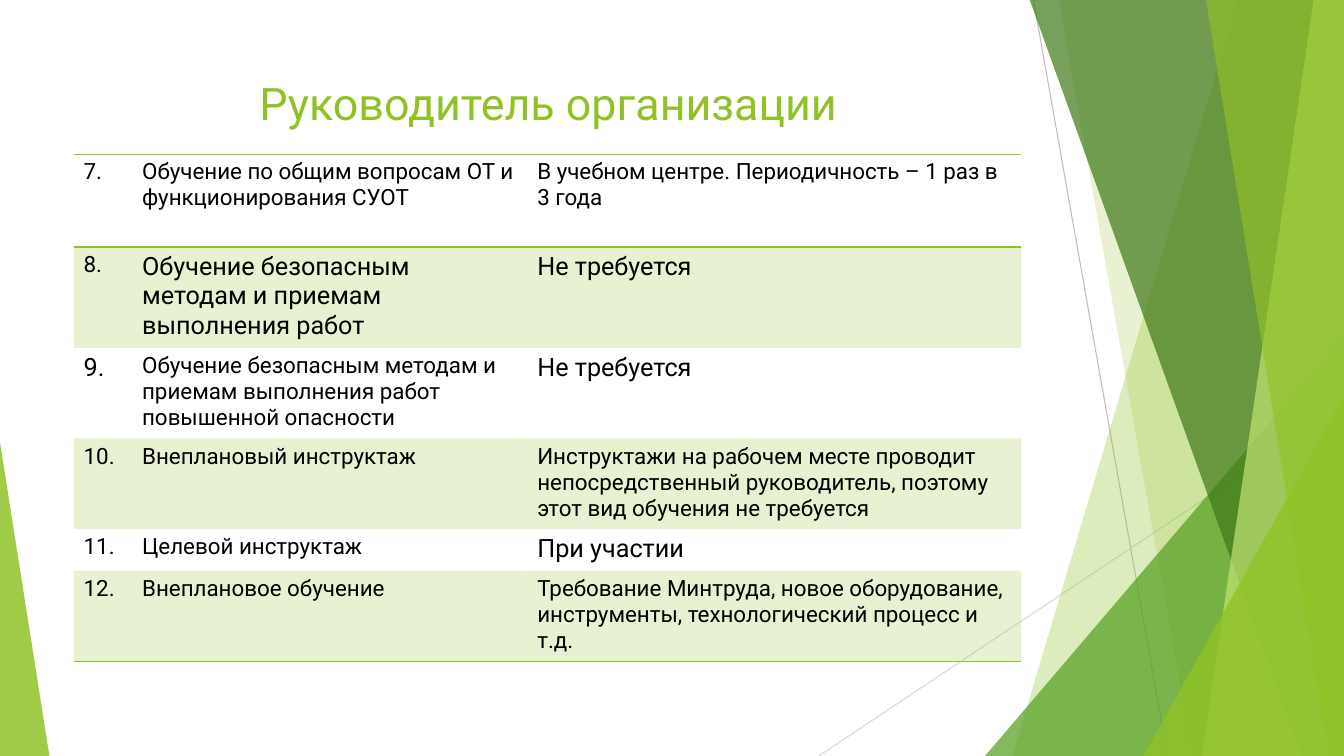
from dataclasses import dataclass

from lxml.etree import SubElement
from pptx import Presentation
from pptx.dml.color import RGBColor
from pptx.enum.shapes import MSO_CONNECTOR as Connector, MSO_SHAPE as Shape
from pptx.enum.text import MSO_ANCHOR as Anchor, PP_ALIGN as Align
from pptx.oxml import parse_xml
from pptx.oxml.ns import nsdecls, qn
from pptx.util import Inches, Pt


@dataclass(frozen=True)
class Theme:
    font: str = "Roboto"
    green: str = "90C226"
    leaf: str = "54A021"
    forest: str = "3F7819"
    lime: str = "C0E474"
    text: str = "000000"
    grey: str = "BFBFBF"
    light_grey: str = "D9D9D9"
    title_size: int = 32
    body_size: int = 16
    large_size: int = 18
    line_width: float = 0.75
    rule_width: int = 1
    band_opacity: int = 20


THEME = Theme()
WIDTH, HEIGHT = 13.33, 7.5
NO_GRID_STYLE = "{2D5ABB26-0587-4C30-8999-92F81FD0307C}"

ROW_HEIGHTS = [0.92, 0.98, 0.87, 0.87, 0.41, 0.87]
COLUMN_WIDTHS = [0.58, 3.92, 4.9]
TRAINING_ROWS = [
    ("7.", "Обучение по общим вопросам ОТ и функционирования СУОТ",
     "В учебном центре. Периодичность – 1 раз в 3 года"),
    ("8.", "Обучение безопасным методам и приемам выполнения работ", "Не требуется"),
    ("9.", "Обучение безопасным методам и приемам выполнения работ повышенной опасности",
     "Не требуется"),
    ("10.", "Внеплановый инструктаж",
     "Инструктажи на рабочем месте проводит непосредственный руководитель, "
     "поэтому этот вид обучения не требуется"),
    ("11.", "Целевой инструктаж", "При участии"),
    ("12.", "Внеплановое обучение",
     "Требование Минтруда, новое оборудование, инструменты, технологический процесс и т.д."),
]
LARGE_CELLS = {(1, 1), (1, 2), (2, 0), (2, 2), (4, 2)}


def fill_translucent(fill, element, color, opacity):
    fill.solid()
    fill.fore_color.rgb = RGBColor.from_string(color)
    color_element = next(element.iter(qn("a:srgbClr")))
    SubElement(color_element, qn("a:alpha"), val=str(opacity * 1000))


def style_text(paragraph, size, color):
    for run in paragraph.runs:
        run.font.name = THEME.font
        run.font.size = Pt(size)
        run.font.color.rgb = RGBColor.from_string(color)


def finish_facet(shape, color, opacity):
    fill_translucent(shape.fill, shape.element, color, opacity)
    shape.line.fill.background()
    shape.shadow.inherit = False


def add_thin_line(slide, start, end, color):
    line = slide.shapes.add_connector(
        Connector.STRAIGHT, *[Inches(value) for value in (*start, *end)])
    line.line.color.rgb = RGBColor.from_string(color)
    line.line.width = Pt(THEME.line_width)
    SubElement(line.element.spPr, qn("a:effectLst"))


def add_band(slide, right, bottom, top_x, bottom_x, color, opacity):
    """Band between a slanted left edge and the right side of the slide."""
    top = -0.01
    corners = [(right, top), (right, bottom), (bottom_x, bottom)]
    builder = slide.shapes.build_freeform(Inches(top_x), Inches(top))
    builder.add_line_segments([(Inches(x), Inches(y)) for x, y in corners], close=True)
    finish_facet(builder.convert_to_shape(), color, opacity)


def add_corner(slide, left, top, right, bottom, apex, color, opacity):
    """Right triangle standing on the bottom edge; apex 0 is left, 1 is right."""
    triangle = slide.shapes.add_shape(
        Shape.ISOSCELES_TRIANGLE, Inches(left), Inches(top),
        Inches(right - left), Inches(bottom - top))
    triangle.adjustments[0] = apex
    finish_facet(triangle, color, opacity)


def add_decoration(slide, right, bottom):
    # Thin crossing lines
    add_thin_line(slide, (10.25, 0), (11.58, bottom), THEME.grey)
    add_thin_line(slide, (right, 4.03), (8.12, bottom), THEME.light_grey)
    # Overlapping facets, back to front
    add_band(slide, right, bottom, 12.28, 10.04, THEME.green, 30)
    add_band(slide, right, bottom, 10.5, 11.83, THEME.green, 20)
    add_corner(slide, 9.77, 3.33, right, bottom, 1, THEME.leaf, 72)
    add_band(slide, right, bottom, 10.21, 12.91, THEME.forest, 70)
    add_band(slide, right, bottom, 13.03, 11.92, THEME.lime, 70)
    add_band(slide, right, bottom, 11.96, 13.18, THEME.green, 65)
    add_corner(slide, 11.34, 3.93, right, bottom, 1, THEME.green, 80)
    # Left corner
    add_corner(slide, 0, 4.39, 0.49, bottom, 0, THEME.green, 85)


def add_title(slide, left, top, width, height):
    box = slide.shapes.add_textbox(
        Inches(left), Inches(top), Inches(width), Inches(height))
    frame = box.text_frame
    frame.word_wrap = True
    frame.vertical_anchor = Anchor.MIDDLE
    frame.margin_bottom = Inches(0.15)
    frame.text = "Руководитель организации"
    paragraph = frame.paragraphs[0]
    paragraph.alignment = Align.CENTER
    style_text(paragraph, THEME.title_size, THEME.green)


def add_rules(cell, sides):
    """Draw horizontal cell borders; sides are given in the order T, B."""
    properties = cell._tc.get_or_add_tcPr()
    for position, side in enumerate(sides):
        properties.insert(position, parse_xml(
            f'<a:ln{side} {nsdecls("a")} w="{Pt(THEME.rule_width)}"><a:solidFill>'
            f'<a:srgbClr val="{THEME.green}"/></a:solidFill></a:ln{side}>'))


def add_training_table(slide, left, top):
    table = slide.shapes.add_table(
        len(TRAINING_ROWS), len(COLUMN_WIDTHS), Inches(left), Inches(top),
        Inches(sum(COLUMN_WIDTHS)), Inches(sum(ROW_HEIGHTS))).table
    table.first_row = table.horz_banding = False
    table._tbl.tblPr.find(qn("a:tableStyleId")).text = NO_GRID_STYLE
    for column, width in zip(table.columns, COLUMN_WIDTHS):
        column.width = Inches(width)
    for row, height in zip(table.rows, ROW_HEIGHTS):
        row.height = Inches(height)

    rules = {0: "TB", len(TRAINING_ROWS) - 1: "B"}
    for row_index, texts in enumerate(TRAINING_ROWS):
        for column_index, text in enumerate(texts):
            cell = table.cell(row_index, column_index)
            cell.text_frame.text = text
            large = (row_index, column_index) in LARGE_CELLS
            size = THEME.large_size if large else THEME.body_size
            style_text(cell.text_frame.paragraphs[0], size, THEME.text)
            if row_index % 2:
                fill_translucent(cell.fill, cell._tc.get_or_add_tcPr(),
                                 THEME.green, THEME.band_opacity)
            else:
                cell.fill.background()
            add_rules(cell, rules.get(row_index, ""))


def main():
    presentation = Presentation()
    presentation.slide_width = Inches(WIDTH)
    presentation.slide_height = Inches(HEIGHT)
    slide = presentation.slides.add_slide(presentation.slide_layouts[6])
    add_decoration(slide, WIDTH, HEIGHT)
    add_title(slide, 0.74, 0.67, 9.4, 0.8)
    add_training_table(slide, 0.73, 1.53)
    presentation.save("out.pptx")


if __name__ == "__main__":
    main()
